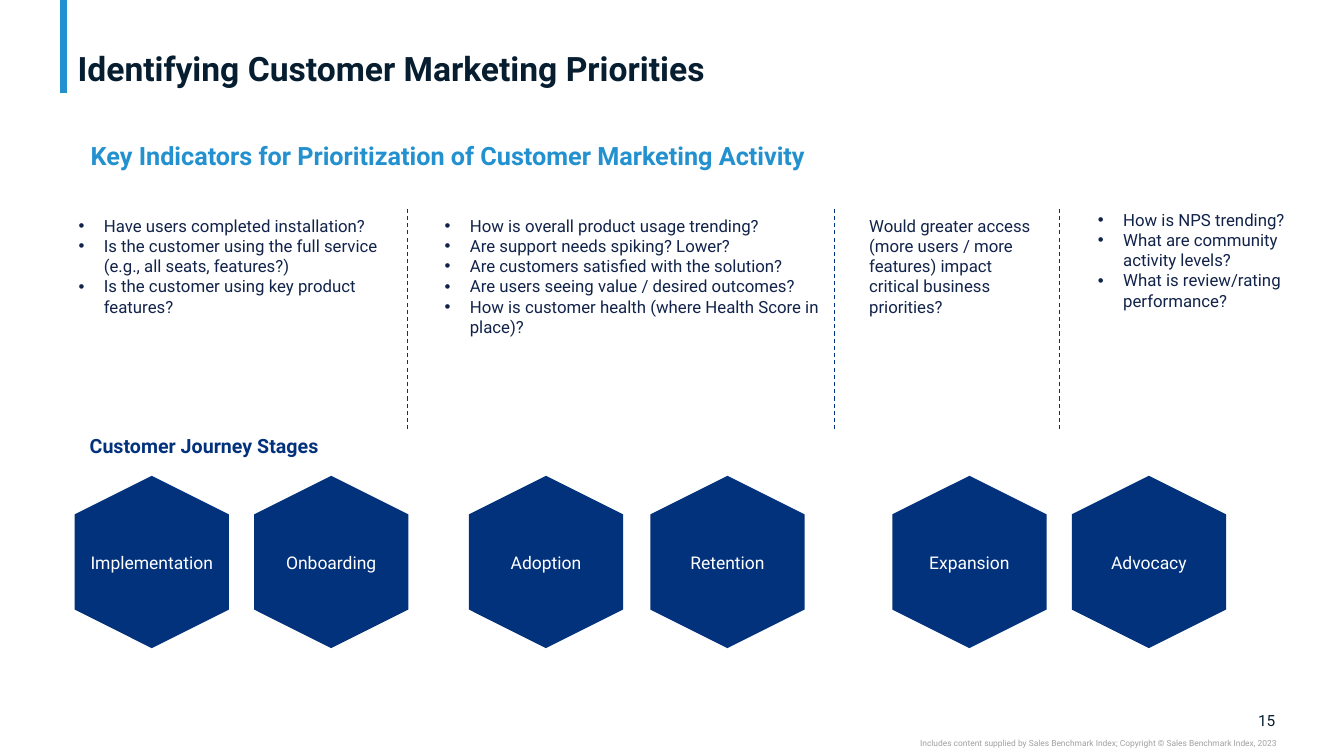
import dataclasses

import lxml.etree
import pptx
import pptx.dml.color
import pptx.enum.dml
import pptx.enum.shapes
import pptx.enum.text
import pptx.oxml.ns
import pptx.util

Inches = pptx.util.Inches
ALIGN = pptx.enum.text.PP_ALIGN
ANCHOR = pptx.enum.text.MSO_ANCHOR


@dataclasses.dataclass(frozen=True)
class Theme:
    font: str = "Roboto"
    ink: str = "071E31"
    body: str = "12234A"
    navy: str = "03327C"
    sky: str = "2391CF"
    grey: str = "A0A0A0"
    white: str = "FFFFFF"
    title_size: float = 24
    heading_size: float = 18
    subheading_size: float = 14
    stage_size: float = 12.5
    body_size: float = 12
    number_size: float = 11
    credit_size: float = 6


THEME = Theme()
TITLE = "Identifying Customer Marketing Priorities"
HEADING = "Key Indicators for Prioritization of Customer Marketing Activity"
SUBHEADING = "Customer Journey Stages"
PAGE_NUMBER = "15"
CREDIT = "Includes content supplied by Sales Benchmark Index; Copyright © Sales Benchmark Index, 2023"

INDICATORS = [
    {"at": (0.65, 2.07, 3.45, 1.35), "bulleted": True, "lines": [
        "Have users completed installation?",
        "Is the customer using the full service (e.g., all seats, features?)",
        "Is the customer using key product features?"]},
    {"at": (4.28, 2.07, 3.99, 1.35), "bulleted": True, "lines": [
        "How is overall product usage trending?",
        "Are support needs spiking? Lower?",
        "Are customers satisfied with the solution?",
        "Are users seeing value / desired outcomes?",
        "How is customer health (where Health Score in place)?"]},
    {"at": (8.49, 2.07, 1.94, 1.14), "bulleted": False, "lines": [
        "Would greater access (more users / more features) impact critical business priorities?"]},
    {"at": (10.76, 2.01, 2.15, 1.35), "bulleted": True, "lines": [
        "How is NPS trending?",
        "What are community activity levels?",
        "What is review/rating performance?"]},
]
STAGE_PAIRS = [
    (0.65, 1.78, ("Implementation", "Onboarding")),
    (4.56, 1.8, ("Adoption", "Retention")),
    (8.76, 1.78, ("Expansion", "Advocacy")),
]
DIVIDERS = (4.04, 8.28, 10.51)
DIVIDER_TOP, DIVIDER_BOTTOM = 2.07, 4.29
HEXAGON_TOP, HEXAGON_WIDTH, HEXAGON_HEIGHT = 4.81, 1.71, 1.53
TEXT_INSETS = (0.13, 0.07, 0.13, 0.07)
NO_INSETS = (0, 0, 0, 0)


def rgb(value):
    return pptx.dml.color.RGBColor.from_string(value)


def set_bullet(para, bulleted):
    properties = para._p.get_or_add_pPr()
    indent = Inches(0.25) if bulleted else 0
    properties.set("marL", str(indent))
    properties.set("indent", str(-indent))
    if bulleted:
        tags = (("buFont", "typeface", "Arial"), ("buChar", "char", "•"))
    else:
        tags = (("buNone", None, None),)
    for tag, name, value in tags:
        mark = lxml.etree.SubElement(properties, pptx.oxml.ns.qn("a:" + tag))
        if name:
            mark.set(name, value)


def write(box, at, lines, size, color, bold=False, align=ALIGN.LEFT, anchor=ANCHOR.TOP,
          insets=TEXT_INSETS, spacing=1.0, bulleted=False):
    box.left, box.top, box.width, box.height = map(Inches, at)
    frame = box.text_frame
    frame.word_wrap = True
    frame.auto_size = pptx.enum.text.MSO_AUTO_SIZE.NONE
    frame.vertical_anchor = anchor
    (frame.margin_left, frame.margin_top,
     frame.margin_right, frame.margin_bottom) = map(Inches, insets)
    for index, line in enumerate(lines):
        para = frame.add_paragraph() if index else frame.paragraphs[0]
        set_bullet(para, bulleted)
        para.alignment = align
        para.line_spacing = spacing
        para.space_before = para.space_after = pptx.util.Pt(0)
        span = para.add_run()
        span.text = line
        span.font.name = THEME.font
        span.font.size = pptx.util.Pt(size)
        span.font.bold = bold
        span.font.color.rgb = rgb(color)


def add_label(page, at, text, size, color, **style):
    write(page.shapes.add_textbox(0, 0, 0, 0), at, [text], size, color, **style)


def add_line(page, x, top, bottom, color, width, dashed=False):
    line = page.shapes.add_connector(
        pptx.enum.shapes.MSO_CONNECTOR.STRAIGHT,
        Inches(x), Inches(top), Inches(x), Inches(bottom))
    line.line.color.rgb = rgb(color)
    line.line.width = pptx.util.Pt(width)
    if dashed:
        line.line.dash_style = pptx.enum.dml.MSO_LINE.DASH
    lxml.etree.SubElement(line._element.spPr, pptx.oxml.ns.qn("a:effectLst"))


def add_stage(page, left, name):
    hexagon = page.shapes.add_shape(
        pptx.enum.shapes.MSO_SHAPE.HEXAGON, Inches(left), Inches(HEXAGON_TOP),
        Inches(HEXAGON_WIDTH), Inches(HEXAGON_HEIGHT))
    hexagon.rotation = 90
    hexagon.adjustments[0] = 0.25
    hexagon.shadow.inherit = False
    hexagon.fill.solid()
    hexagon.fill.fore_color.rgb = rgb(THEME.navy)
    hexagon.line.fill.background()
    add_label(page, (left + 0.09, 5, HEXAGON_HEIGHT, 1.17), name,
              THEME.stage_size, THEME.white, align=ALIGN.CENTER,
              anchor=ANCHOR.MIDDLE, insets=NO_INSETS)


def main():
    deck = pptx.Presentation()
    deck.slide_width, deck.slide_height = Inches(13.33), Inches(7.5)
    page = deck.slides.add_slide(deck.slide_layouts.get_by_name("Comparison"))

    add_line(page, 0.63, 0, 0.92, THEME.sky, 5)
    write(page.shapes.title, (0.67, 0.04, 11.99, 0.84), [TITLE], THEME.title_size,
          THEME.ink, bold=True, anchor=ANCHOR.BOTTOM, insets=(0.1, 0, 0.1, 0), spacing=0.9)
    add_label(page, (0.77, 1.32, 10.92, 0.45), HEADING,
              THEME.heading_size, THEME.sky, bold=True)

    bodies = list(page.placeholders)[1:]
    for body, column in zip(bodies, INDICATORS):
        write(body, column["at"], column["lines"], THEME.body_size, THEME.body,
              bulleted=column["bulleted"])
    for x in DIVIDERS:
        add_line(page, x, DIVIDER_TOP, DIVIDER_BOTTOM, THEME.navy, 0.75, dashed=True)

    add_label(page, (0.76, 4.23, 6.67, 0.37), SUBHEADING,
              THEME.subheading_size, THEME.navy, bold=True)
    for left, pitch, names in STAGE_PAIRS:
        for index, name in enumerate(names):
            add_stage(page, left + index * pitch, name)

    add_label(page, (12.32, 7.05, 0.33, 0.19), PAGE_NUMBER, THEME.number_size, THEME.ink,
              align=ALIGN.RIGHT, anchor=ANCHOR.MIDDLE, insets=NO_INSETS)
    add_label(page, (7.5, 7.32, 5.16, 0.1), CREDIT, THEME.credit_size, THEME.grey,
              align=ALIGN.RIGHT, insets=NO_INSETS)
    deck.save("out.pptx")


if __name__ == "__main__":
    main()
